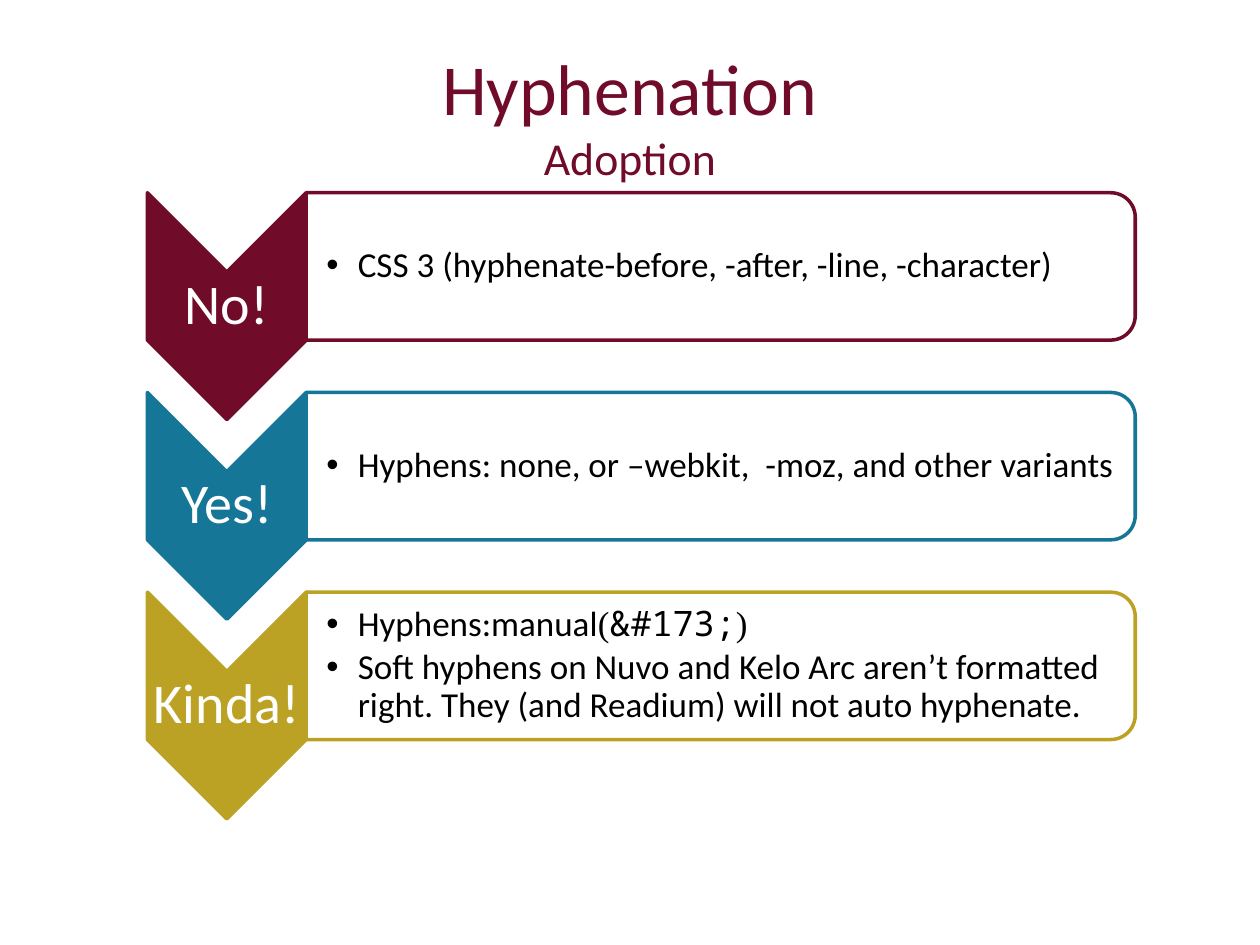
from lxml.etree import SubElement
from pptx import Presentation
from pptx.dml.color import RGBColor
from pptx.enum.shapes import MSO_SHAPE
from pptx.enum.text import MSO_ANCHOR, PP_ALIGN
from pptx.oxml.ns import qn
from pptx.util import Inches, Pt

WIDTH, HEIGHT = 10, 7.5
TOP, PITCH = 1.53, 1.585
MAROON, WHITE, BLACK = "700B2A", "FFFFFF", "000000"
SANS, SERIF, MONO = "Calibri", "Times New Roman", "Noto Sans Mono"
LABEL = {"alignment": PP_ALIGN.CENTER, "line_spacing": 0.9}
BULLET = {"line_spacing": 0.9, "space_after": Pt(3)}
ROWS = [
    ("No!", MAROON, [[("CSS 3 (hyphenate-before, -after, -line, -character)", SANS)]]),
    ("Yes!", "167698", [[("Hyphens: none, or –webkit,  -moz, and other variants", SANS)]]),
    ("Kinda!", "BCA224", [
        [("Hyphens:manual", SANS), ("(", SERIF), ("&#173;", MONO), (")", SERIF)],
        [("Soft hyphens on Nuvo and Kelo Arc aren’t formatted right. "
          "They (and Readium) will not auto hyphenate.", SANS)],
    ]),
]


def rgb(value):
    """Turn a hex string into a colour."""
    return RGBColor.from_string(value)


def set_all(target, values):
    """Set each attribute in a dict of format values."""
    for name, value in values.items():
        setattr(target, name, value)


def add_text(s, box, insets, anchor):
    """Add a wrapping text box and return its text frame."""
    tf = s.shapes.add_textbox(*map(Inches, box)).text_frame
    sides = ("margin_left", "margin_top", "margin_right", "margin_bottom")
    set_all(tf, {"word_wrap": True, "vertical_anchor": anchor})
    set_all(tf, dict(zip(sides, map(Inches, insets))))
    return tf


def add_run(p, text, size, color, font=SANS):
    """Add one formatted run to a paragraph."""
    r = p.add_run()
    r.text = text
    set_all(r.font, {"name": font, "size": Pt(size)})
    r.font.color.rgb = rgb(color)


def add_turned(s, kind, box, fill, line):
    """Add a shape turned a quarter so that it covers the given box."""
    x, y, w, h = box
    turned = (x + (w - h) / 2, y + (h - w) / 2, h, w)
    sp = s.shapes.add_shape(kind, *map(Inches, turned))
    sp.rotation = 90
    sp.shadow.inherit = False
    sp.fill.solid()
    sp.fill.fore_color.rgb = rgb(fill)
    sp.line.color.rgb = rgb(line)
    sp.line.width = Pt(2)


def add_bullet(p):
    """Give a paragraph a round bullet and a hanging indent."""
    pPr = p._p.get_or_add_pPr()
    pPr.set("marL", str(Inches(0.25)))
    pPr.set("indent", str(Inches(-0.25)))
    SubElement(pPr, qn("a:buFont"), typeface="Arial")
    SubElement(pPr, qn("a:buChar"), char="•")


def add_title(s, box):
    """Place the title and its smaller subtitle."""
    tf = add_text(s, box, (0.1, 0.05, 0.1, 0.05), MSO_ANCHOR.TOP)
    for i, (text, size) in enumerate([("Hyphenation", 41), ("Adoption", 26.1)]):
        p = tf.add_paragraph() if i else tf.paragraphs[0]
        p.alignment = PP_ALIGN.CENTER
        add_run(p, text, size, MAROON)


def add_row(s, box, label, color, items):
    """Place a labelled chevron and its panel of bullets."""
    x, y, w, h = box
    arrow = 1.26
    panel_h = h * 0.65
    panel = (x + arrow, y, w - arrow, panel_h)
    add_turned(s, MSO_SHAPE.CHEVRON, (x, y, arrow, h), color, color)
    tf = add_text(s, (x, y + h * 0.35, arrow, h * 0.3), [0.02] * 4, MSO_ANCHOR.MIDDLE)
    p = tf.paragraphs[0]
    set_all(p, LABEL)
    add_run(p, label, 32, WHITE)
    add_turned(s, MSO_SHAPE.ROUND_2_SAME_RECTANGLE, panel, WHITE, color)
    inner = (panel[0], y + 0.06, panel[2] - 0.06, panel_h - 0.12)
    tf = add_text(s, inner, (0.16, 0.01, 0.01, 0.01), MSO_ANCHOR.MIDDLE)
    for i, runs in enumerate(items):
        p = tf.add_paragraph() if i else tf.paragraphs[0]
        add_bullet(p)
        set_all(p, BULLET)
        for text, font in runs:
            add_run(p, text, 20, BLACK, font)


def main():
    """Build the slide and save it."""
    prs = Presentation()
    set_all(prs, {"slide_width": Inches(WIDTH), "slide_height": Inches(HEIGHT)})
    s = prs.slides.add_slide(prs.slide_layouts[6])
    add_title(s, (WIDTH * 0.05, HEIGHT * 0.04, WIDTH * 0.9, 1.25))
    for i, row in enumerate(ROWS):
        add_row(s, (1.17, TOP + i * PITCH, 7.84, 1.8), *row)
    prs.save("out.pptx")


if __name__ == "__main__":
    main()
